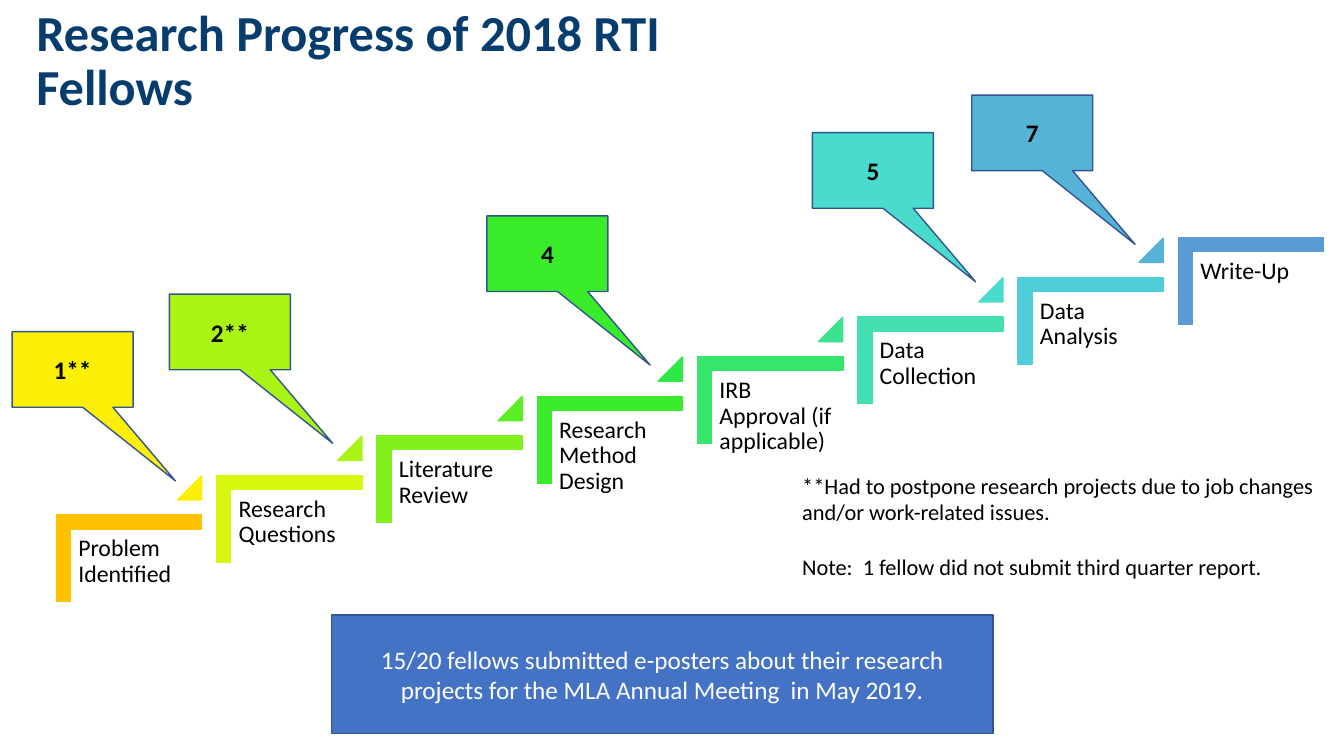
from dataclasses import dataclass

from pptx import Presentation
from pptx.dml.color import RGBColor
from pptx.enum.shapes import MSO_SHAPE as Preset
from pptx.enum.text import MSO_ANCHOR as Anchor, MSO_AUTO_SIZE as AutoSize, PP_ALIGN as Align
from pptx.util import Inches, Pt

SLIDE_WIDTH, SLIDE_HEIGHT = Inches(13.33), Inches(7.5)
COLUMN, ROW = SLIDE_WIDTH / 100, SLIDE_HEIGHT / 100
FONT = "Calibri"
BLACK, WHITE, NAVY = "000000", "FFFFFF", "073C6E"
BLUE, OUTLINE = "4472C4", "325491"

STEP_WIDTH, STEP_HEIGHT = 10.8, 11.47
CORNER_THICKNESS = 0.161
CALLOUT_TAIL = (0.85, 1.474)

STEPS = [
    ("Problem Identified", "FFC000", "FBEE07"),
    ("Research Questions", "D7F80E", "A9F415"),
    ("Literature Review", "80F11C", "5BEE23"),
    ("Research Method Design", "39EB29", "30E845"),
    ("IRB Approval (if applicable)", "36E56C", "3DE290"),
    ("Data Collection", "43DFB0", "49DCCC"),
    ("Data Analysis", "4FCEDA", "55B3D7"),
    ("Write-Up", "5B9BD5", None),
]
CALLOUTS = [
    (0, "1**", "FBEE07", -3.3, -24.27),
    (1, "2**", "A9F415", -3.52, -24),
    (3, "4", "39EB29", -3.75, -23.87),
    (5, "5", "49DCCC", -3.38, -24.4),
    (6, "7", "55B3D7", -3.45, -24.13),
]
NOTES = [
    "**Had to postpone research projects due to job changes and/or work-related issues.",
    "Note:  1 fellow did not submit third quarter report.",
]
BANNER = (
    "15/20 fellows submitted e-posters about their research "
    "projects for the MLA Annual Meeting  in May 2019."
)


@dataclass
class Box:
    left: float
    top: float
    width: float
    height: float

    def inner(self, left, top, width, height):
        return Box(self.left + left, self.top + top, width, height)

    def lengths(self):
        return (
            round(self.left * COLUMN),
            round(self.top * ROW),
            round(self.width * COLUMN),
            round(self.height * ROW),
        )


def color(value):
    return RGBColor.from_string(value)


def write(paragraph, text, size, font_color, bold=False, align=Align.LEFT):
    paragraph.text = text
    paragraph.alignment = align
    paragraph.font.name = FONT
    paragraph.font.size = Pt(size)
    paragraph.font.bold = bold
    paragraph.font.color.rgb = color(font_color)


def add_preset(slide, preset, box, fill, line, adjustments=()):
    shape = slide.shapes.add_shape(preset, *box.lengths())
    shape.shadow.inherit = False
    shape.fill.solid()
    shape.fill.fore_color.rgb = color(fill)
    shape.line.color.rgb = color(line)
    shape.line.width = Pt(1)
    for index, adjustment in enumerate(adjustments):
        shape.adjustments[index] = adjustment
    return shape


def add_label(shape, text, font_color, bold=False):
    frame = shape.text_frame
    frame.word_wrap = True
    frame.vertical_anchor = Anchor.MIDDLE
    write(frame.paragraphs[0], text, 18, font_color, bold, Align.CENTER)


def add_text_box(slide, box):
    frame = slide.shapes.add_textbox(*box.lengths()).text_frame
    frame.word_wrap = True
    return frame


def place_title(slide, box):
    title = slide.shapes.title
    title.left, title.top, title.width, title.height = box.lengths()
    frame = title.text_frame
    frame.auto_size = AutoSize.NONE
    frame.vertical_anchor = Anchor.BOTTOM
    paragraph = frame.paragraphs[0]
    write(paragraph, "Research Progress of 2018 RTI Fellows", 36, NAVY, True)
    paragraph.line_spacing = 0.9


def place_step(slide, box, text, corner_color, triangle_color):
    corner = add_preset(
        slide, Preset.CORNER, box.inner(2.18, -3.87, 6.45, 19.2),
        corner_color, corner_color, (CORNER_THICKNESS, CORNER_THICKNESS),
    )
    corner.rotation = 90
    frame = add_text_box(slide, box.inner(1.1, 1.87, 9.75, 15.2))
    frame.margin_left = frame.margin_right = Inches(0.07)
    frame.margin_top = frame.margin_bottom = Inches(0.07)
    write(frame.paragraphs[0], text, 17, BLACK)
    frame.paragraphs[0].line_spacing = 0.9
    if triangle_color:
        add_preset(
            slide, Preset.ISOSCELES_TRIANGLE, box.inner(9, -5.2, 1.8, 3.2),
            triangle_color, triangle_color, (1,),
        )


def place_staircase(slide, box):
    last = len(STEPS) - 1
    run = (box.width - STEP_WIDTH) / last
    rise = (box.height - STEP_HEIGHT) / last
    step_boxes = [
        box.inner(index * run, (last - index) * rise, STEP_WIDTH, STEP_HEIGHT)
        for index in range(len(STEPS))
    ]
    for step_box, step in zip(step_boxes, STEPS):
        place_step(slide, step_box, *step)
    for index, count, fill, left, top in CALLOUTS:
        callout = add_preset(
            slide, Preset.RECTANGULAR_CALLOUT,
            step_boxes[index].inner(left, top, 9, 10),
            fill, OUTLINE, CALLOUT_TAIL,
        )
        add_label(callout, count, BLACK, True)


def place_notes(slide, box):
    frame = add_text_box(slide, box)
    write(frame.paragraphs[0], NOTES[0], 16, BLACK)
    closing = frame.add_paragraph()
    write(closing, NOTES[1], 16, BLACK)
    closing.space_before = Pt(19.5)


def place_banner(slide, box):
    banner = add_preset(slide, Preset.RECTANGLE, box, BLUE, OUTLINE)
    add_label(banner, BANNER, WHITE)


def main():
    presentation = Presentation()
    presentation.slide_width, presentation.slide_height = SLIDE_WIDTH, SLIDE_HEIGHT
    slide = presentation.slides.add_slide(presentation.slide_layouts[5])
    place_title(slide, Box(1.95, 2, 58.88, 14.13))
    place_staircase(slide, Box(4.2, 31.47, 94.28, 48.14))
    place_notes(slide, Box(58.95, 61.73, 41.05, 15.73))
    place_banner(slide, Box(24.68, 81.33, 49.2, 15.73))
    presentation.save("out.pptx")


if __name__ == "__main__":
    main()
